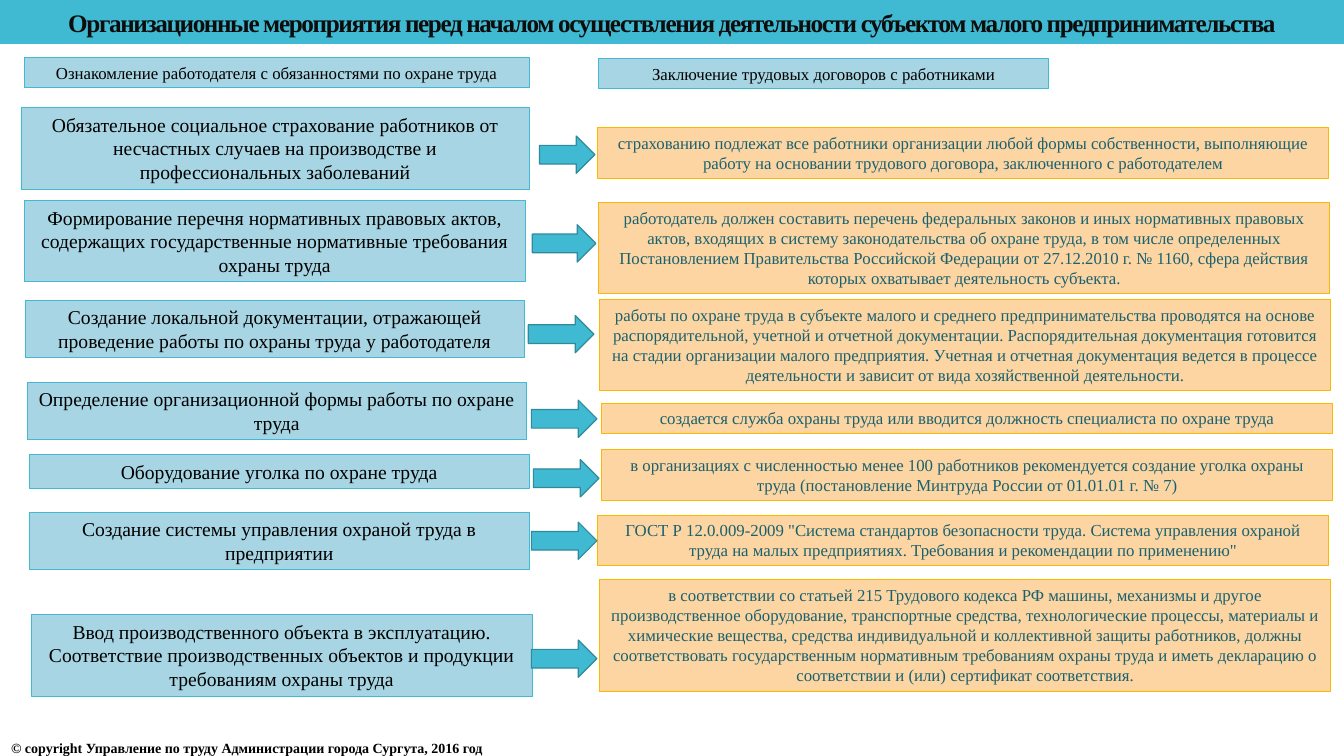
"""Builds the slide on labour protection steps before a small business starts work."""
from pptx import Presentation
from pptx.dml.color import RGBColor
from pptx.enum.shapes import MSO_SHAPE
from pptx.enum.text import MSO_ANCHOR, PP_ALIGN
from pptx.util import Inches, Pt

RECTANGLE, ARROW = MSO_SHAPE.RECTANGLE, MSO_SHAPE.RIGHT_ARROW
TOP, BOTTOM = MSO_ANCHOR.TOP, MSO_ANCHOR.BOTTOM
CENTER = PP_ALIGN.CENTER

FONT = "Times New Roman"
BLACK = RGBColor(0x00, 0x00, 0x00)
NEAR_BLACK = RGBColor(0x0D, 0x0D, 0x0D)
TEAL = RGBColor(0x40, 0xBA, 0xD2)
DARK_TEAL = RGBColor(0x2F, 0x8A, 0x9B)
TEXT_TEAL = RGBColor(0x1A, 0x61, 0x6F)
PALE_BLUE = RGBColor(0xA7, 0xD5, 0xE3)
PEACH = RGBColor(0xFC, 0xD5, 0xA2)
AMBER = RGBColor(0xFA, 0xB9, 0x00)

TITLE = ("Организационные мероприятия перед началом осуществления деятельности "
         "субъектом малого предпринимательства")
COPYRIGHT = "© copyright Управление по труду Администрации города Сургута, 2016 год"

# Headings: left, top, width, text
HEADINGS = [
    (0.24, 0.57, 5.01, "Ознакомление работодателя с обязанностями по охране труда"),
    (5.94, 0.58, 4.46, "Заключение трудовых договоров с работниками"),
]

# Steps: (left, top, width, lines, text), arrow (left, top, width), detail (left, top, lines, text)
STEPS = [
    ((0.21, 1.07, 5.04, 3,
      "Обязательное социальное страхование работников от несчастных случаев "
      "на производстве и профессиональных заболеваний"),
     (5.35, 1.35, 0.55),
     (5.93, 1.27, 2,
      "страхованию подлежат все работники организации любой формы собственности, "
      "выполняющие работу на основании трудового договора, заключенного с работодателем")),
    ((0.24, 1.99, 4.97, 3,
      "Формирование перечня нормативных правовых актов, содержащих "
      "государственные нормативные требования охраны труда"),
     (5.28, 2.23, 0.63),
     (5.94, 2.01, 4,
      "работодатель должен составить перечень федеральных законов и иных нормативных "
      "правовых актов, входящих в систему законодательства об охране труда, в том числе "
      "определенных Постановлением Правительства Российской Федерации от 27.12.2010 г. "
      "№ 1160, сфера действия которых охватывает деятельность субъекта.")),
    ((0.25, 2.98, 4.95, 2,
      "Создание локальной документации, отражающей проведение работы "
      "по охраны труда у работодателя"),
     (5.24, 3.13, 0.65),
     (5.95, 2.97, 4,
      "работы по охране труда в субъекте малого и среднего предпринимательства проводятся "
      "на основе распорядительной, учетной и отчетной документации. Распорядительная "
      "документация готовится на стадии организации малого предприятия. Учетная и отчетная "
      "документация ведется в процессе деятельности и зависит от вида хозяйственной "
      "деятельности.")),
    ((0.27, 3.79, 4.95, 2, "Определение организационной формы работы по охране труда"),
     (5.27, 3.97, 0.65),
     (5.97, 4.0, 1,
      "создается служба охраны труда или вводится должность специалиста по охране труда")),
    ((0.29, 4.51, 4.96, 1, "Оборудование уголка по охране труда"),
     (5.29, 4.56, 0.65),
     (5.97, 4.46, 2,
      "в организациях с численностью менее 100 работников рекомендуется создание уголка "
      "охраны труда (постановление Минтруда России от 01.01.01 г. № 7)")),
    ((0.29, 5.08, 4.96, 2, "Создание системы управления охраной труда в предприятии"),
     (5.27, 5.18, 0.65),
     (5.93, 5.11, 2,
      'ГОСТ Р 12.0.009-2009 "Система стандартов безопасности труда. Система управления '
      'охраной труда на малых предприятиях. Требования и рекомендации по применению"')),
    ((0.31, 6.1, 4.97, 3,
      "Ввод производственного объекта в эксплуатацию. Соответствие производственных "
      "объектов и продукции требованиям охраны труда"),
     (5.27, 6.35, 0.65),
     (5.95, 5.75, 5,
      "в соответствии со статьей 215 Трудового кодекса РФ машины, механизмы и другое "
      "производственное оборудование, транспортные средства, технологические процессы, "
      "материалы и химические вещества, средства индивидуальной и коллективной защиты "
      "работников, должны соответствовать государственным нормативным требованиям охраны "
      "труда и иметь декларацию о соответствии и (или) сертификат соответствия.")),
]

STEP_SIZE, DETAIL_SIZE = 14, 12
DETAIL_WIDTH = 7.25
ARROW_HEIGHT = 0.37
LINE_FACTOR = 1.21


def box_height(lines, size):
    return 0.1 + lines * size * LINE_FACTOR / 72


def add_shape(slide, preset, at, fill, outline, outline_width=0.75):
    shape = slide.shapes.add_shape(preset, *map(Inches, at))
    shape.shadow.inherit = False
    shape.fill.solid()
    shape.fill.fore_color.rgb = fill
    shape.line.color.rgb = outline
    shape.line.width = Pt(outline_width)
    return shape


def write(shape, text, size, color, anchor=TOP, align=CENTER, bold=False):
    frame = shape.text_frame
    frame.word_wrap = True
    frame.vertical_anchor = anchor
    paragraph = frame.paragraphs[0]
    paragraph.add_run().text = text
    paragraph.alignment = align
    font = paragraph.font
    font.name, font.size, font.bold = FONT, Pt(size), bold
    font.color.rgb = color
    return paragraph


def add_box(slide, left, top, width, lines, text, size, fill, outline, color):
    at = (left, top, width, box_height(lines, size))
    write(add_shape(slide, RECTANGLE, at, fill, outline), text, size, color)


def main():
    deck = Presentation()
    deck.slide_width, deck.slide_height = Inches(13.33), Inches(7.5)
    slide = deck.slides.add_slide(deck.slide_layouts[6])

    banner = add_shape(slide, RECTANGLE, (0, 0, 13.33, 0.43), TEAL, TEAL)
    title = write(banner, TITLE, 18, NEAR_BLACK, BOTTOM, bold=True)
    title.line_spacing = 0.9
    title.runs[0]._r.get_or_add_rPr().set("spc", "-100")

    for left, top, width, text in HEADINGS:
        add_box(slide, left, top, width, 1, text, DETAIL_SIZE, PALE_BLUE, TEAL, BLACK)

    for step, (arrow_left, arrow_top, arrow_width), detail in STEPS:
        add_box(slide, *step, STEP_SIZE, PALE_BLUE, TEAL, BLACK)
        left, top, lines, text = detail
        add_box(slide, left, top, DETAIL_WIDTH, lines, text, DETAIL_SIZE,
                PEACH, AMBER, TEXT_TEAL)
        arrow_at = (arrow_left, arrow_top, arrow_width, ARROW_HEIGHT)
        add_shape(slide, ARROW, arrow_at, TEAL, DARK_TEAL, 0.85)

    footer = slide.shapes.add_textbox(*map(Inches, (0.11, 7.33, 7.56, 0.17)))
    frame = footer.text_frame
    frame.margin_left = frame.margin_right = frame.margin_top = frame.margin_bottom = 0
    write(footer, COPYRIGHT, 10, BLACK, BOTTOM, PP_ALIGN.LEFT, bold=True)

    deck.save("out.pptx")


if __name__ == "__main__":
    main()
